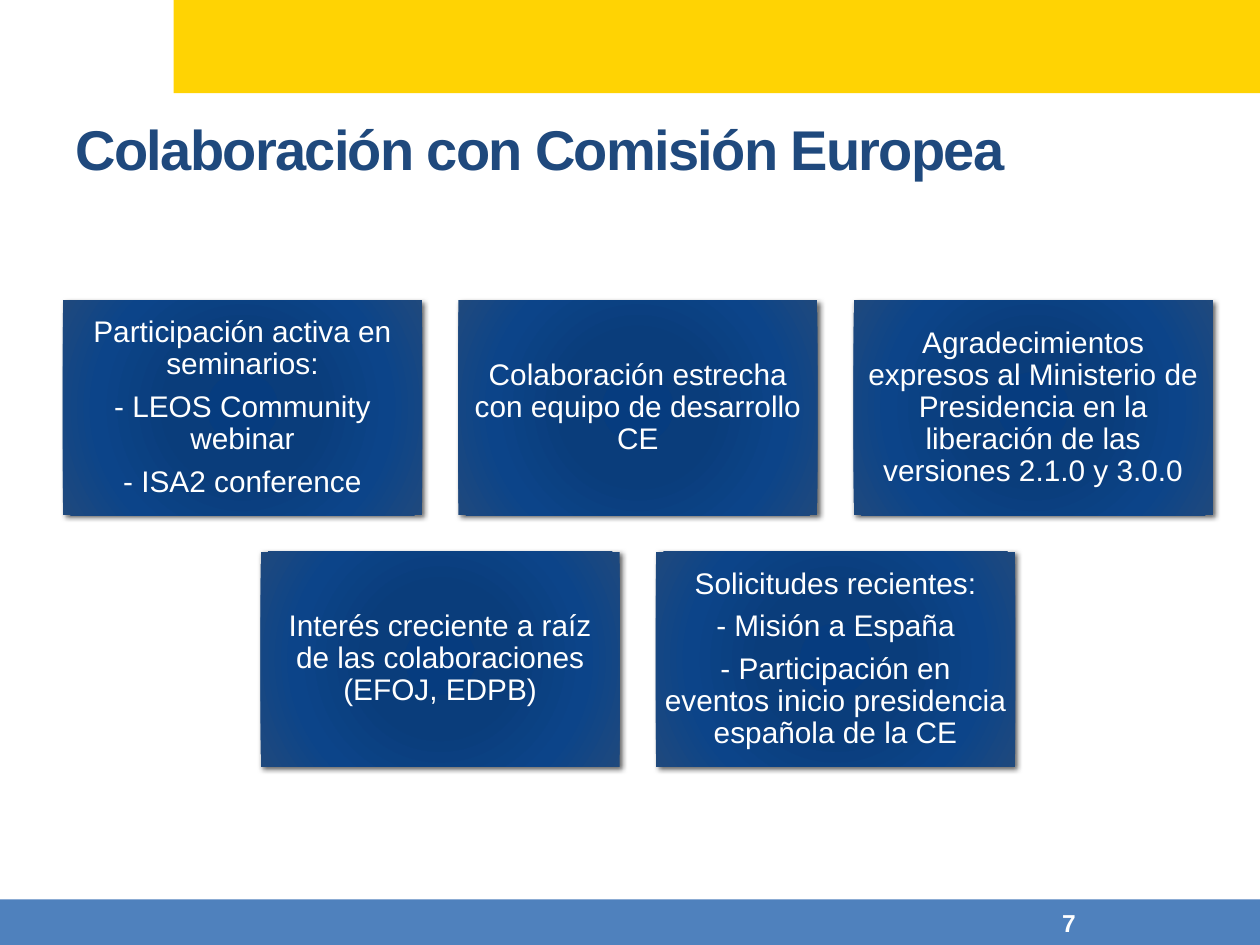
"""Build the slide on collaboration with the European Commission."""
import pptx
import pptx.dml.color
import pptx.enum.shapes
import pptx.enum.text
import pptx.oxml
import pptx.oxml.ns
import pptx.util

Cm = pptx.util.Cm
Pt = pptx.util.Pt
ALIGN = pptx.enum.text.PP_ALIGN
MIDDLE = pptx.enum.text.MSO_ANCHOR.MIDDLE
COLORS = {
    "blue": "4F81BD", "gold": "FFD303", "navy": "1F497D", "white": "FFFFFF",
    "core": "063C7F", "inner": "0A3D7B", "outer": "0C4489", "shade": "000000",
}
STOPS = [(0, "core"), (34, "inner"), (70, "outer"), (100, "navy")]
WIDTH, HEIGHT = 7.24, 4.34
STEP_X, STEP_Y = 7.97, 5.07
MID_X, TOP = 12.86, 6.05
ROWS = [
    [
        ["Participación activa en seminarios:",
         "- LEOS Community webinar",
         "- ISA2 conference"],
        ["Colaboración estrecha con equipo de desarrollo CE"],
        ["Agradecimientos expresos al Ministerio de Presidencia "
         "en la liberación de las versiones 2.1.0 y 3.0.0"],
    ],
    [
        ["Interés creciente a raíz de las colaboraciones (EFOJ, EDPB)"],
        ["Solicitudes recientes:",
         "- Misión a España",
         "- Participación en eventos inicio presidencia española de la CE"],
    ],
]
TITLE = {"size": Pt(32), "bold": True}
NUMBER = {"size": Pt(14), "bold": True}
BODY = {"size": Pt(17), "bold": False}
LEFT = {"alignment": ALIGN.LEFT}
CARD = {"alignment": ALIGN.CENTER, "line_spacing": 0.9, "space_after": Pt(6)}


def apply(item, values):
    """Set each named value on the item."""
    for name, value in values.items():
        setattr(item, name, value)


def color(name):
    """Return the colour with this name."""
    return pptx.dml.color.RGBColor.from_string(COLORS[name])


def place(item, left, top, width, height):
    """Move and size an item, in centimetres."""
    apply(item, {"left": Cm(left), "top": Cm(top),
                 "width": Cm(width), "height": Cm(height)})


def write(item, lines, font, para, tone="white", inset=None):
    """Fill the item with formatted paragraphs."""
    frame = item.text_frame
    frame.text = "\n".join(lines)
    apply(frame, {"word_wrap": True, "vertical_anchor": MIDDLE})
    if inset is not None:
        sides = ("left", "right", "top", "bottom")
        apply(frame, {f"margin_{side}": Cm(inset) for side in sides})
    for line in frame.paragraphs:
        apply(line, para)
        apply(line.font, {"name": "Arial", **font})
        line.font.color.rgb = color(tone)


def add_box(slide, *area):
    """Add a plain rectangle without line or shadow."""
    kind = pptx.enum.shapes.MSO_SHAPE.RECTANGLE
    box = slide.shapes.add_shape(kind, *map(Cm, area))
    box.line.fill.background()
    box.shadow.inherit = False
    return box


def add_band(slide, tone, *area):
    """Add a solid band of colour."""
    band = add_box(slide, *area)
    band.fill.solid()
    band.fill.fore_color.rgb = color(tone)


def add_card(slide, left, top, lines):
    """Add a card with radial gradient, soft shadow and text."""
    card = add_box(slide, left, top, WIDTH, HEIGHT)
    space = pptx.oxml.ns.nsdecls("a")
    stops = "".join(
        f'<a:gs pos="{pos * 1000}"><a:srgbClr val="{COLORS[tone]}"/></a:gs>'
        for pos, tone in STOPS)
    grad = pptx.oxml.parse_xml(
        f'<a:gradFill {space} rotWithShape="1"><a:gsLst>{stops}</a:gsLst>'
        '<a:path path="circle"><a:fillToRect l="50000" t="50000" '
        'r="50000" b="50000"/></a:path></a:gradFill>')
    shade = pptx.oxml.parse_xml(
        f'<a:outerShdw {space} blurRad="{Pt(3)}" dist="{Pt(2)}" '
        f'dir="2700000" rotWithShape="0"><a:srgbClr val="{COLORS["shade"]}">'
        '<a:alpha val="60000"/></a:srgbClr></a:outerShdw>')
    props = card.element.spPr
    props.insert(2, grad)
    props.find(pptx.oxml.ns.qn("a:effectLst")).append(shade)
    write(card, lines, BODY, CARD, inset=0.17)


def add_title(slide, text):
    """Fill and move the title placeholder."""
    title = slide.shapes.title
    place(title, 1.27, 2.13, 22.86, 1.7)
    write(title, [text], TITLE, LEFT, "navy")
    for run in title.text_frame.paragraphs[0].runs:
        run.font._element.set("spc", "-100")


def add_number(slide, text):
    """Add the page number."""
    box = slide.shapes.add_textbox(Cm(21.16), Cm(18.19), Cm(2.97), Cm(0.84))
    write(box, [text], NUMBER, LEFT)


def main():
    """Build and save the slide."""
    deck = pptx.Presentation()
    apply(deck, {"slide_width": Cm(25.4), "slide_height": Cm(19.05)})
    slide = deck.slides.add_slide(deck.slide_layouts[5])
    add_band(slide, "blue", 0, 18.13, 25.4, 0.92)
    add_band(slide, "gold", 3.5, 0, 21.9, 1.88)
    add_title(slide, "Colaboración con Comisión Europea")
    add_number(slide, "7")
    for row, cards in enumerate(ROWS):
        start = MID_X - (WIDTH + (len(cards) - 1) * STEP_X) / 2
        for col, lines in enumerate(cards):
            add_card(slide, start + col * STEP_X, TOP + row * STEP_Y, lines)
    deck.save("out.pptx")


if __name__ == "__main__":
    main()
